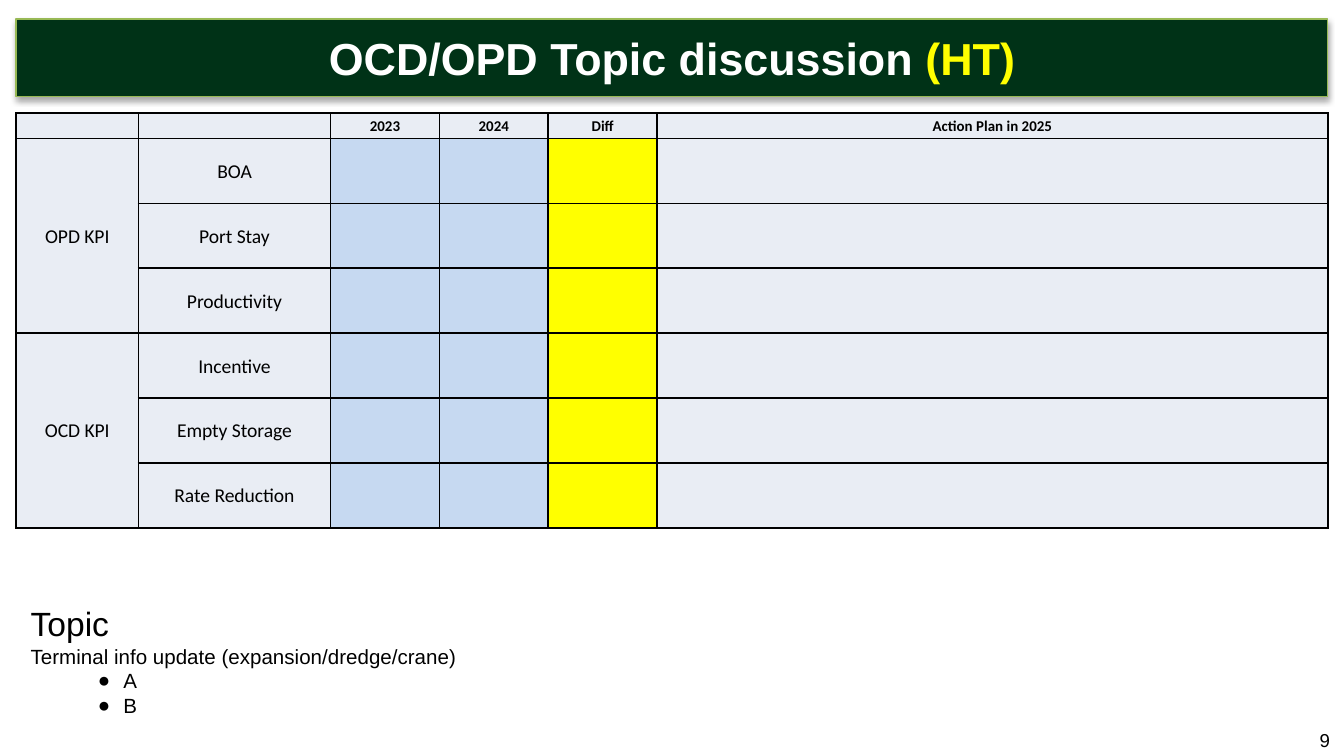
from lxml.etree import SubElement
from pptx import Presentation
from pptx.dml.color import RGBColor
from pptx.enum.shapes import MSO_SHAPE
from pptx.enum.text import MSO_ANCHOR, PP_ALIGN
from pptx.oxml.ns import qn
from pptx.util import Inches, Pt

WIDTH = 10
HEIGHT = WIDTH * 9 / 16
MARGIN = 0.12
CONTENT_WIDTH = WIDTH - 2 * MARGIN

GREEN, LIME, BLACK, WHITE = "003217", "98B955", "000000", "FFFFFF"
PALE, BLUE, YELLOW = "E9EDF4", "C6D9F1", "FFFF00"

COLUMN_WIDTHS = [0.91, 1.43, 0.81, 0.81, 0.81, 4.99]
HEADER_HEIGHT, BODY_HEIGHT = 0.19, 2.9
HEADERS = ["", "", "2023", "2024", "Diff", "Action Plan in 2025"]
BODY_FILLS = [PALE, PALE, BLUE, BLUE, YELLOW, PALE]
KPI_GROUPS = {
    "OPD KPI": ["BOA", "Port Stay", "Productivity"],
    "OCD KPI": ["Incentive", "Empty Storage", "Rate Reduction"],
}


def paint(color_format, color):
    color_format.rgb = RGBColor.from_string(color)


def fill_solid(fill, color):
    fill.solid()
    paint(fill.fore_color, color)


def style_font(font, size, color=BLACK, name="Arial", bold=False):
    font.size, font.name, font.bold = Pt(size), name, bold
    fill_solid(font.fill, color)


def set_insets(target, left, top, right, bottom):
    target.margin_left, target.margin_right = Inches(left), Inches(right)
    target.margin_top, target.margin_bottom = Inches(top), Inches(bottom)


def add_soft_shadow(shape):
    effects = SubElement(shape._element.spPr, qn("a:effectLst"))
    shadow = SubElement(effects, qn("a:outerShdw"), blurRad=str(Pt(3.1)),
                        dist=str(Pt(1.8)), dir="5400000", rotWithShape="0")
    color = SubElement(shadow, qn("a:srgbClr"), val=BLACK)
    SubElement(color, qn("a:alpha"), val="35000")


def add_banner(slide, spans):
    banner = slide.shapes.add_shape(
        MSO_SHAPE.RECTANGLE, Inches(MARGIN), Inches(0.14),
        Inches(CONTENT_WIDTH), Inches(0.58))
    fill_solid(banner.fill, GREEN)
    paint(banner.line.color, LIME)
    banner.line.width = Pt(0.75)
    add_soft_shadow(banner)
    frame = banner.text_frame
    set_insets(frame, 0, 0, 0, 0)
    frame.vertical_anchor = MSO_ANCHOR.MIDDLE
    para = frame.paragraphs[0]
    para.alignment = PP_ALIGN.CENTER
    for text, color in spans:
        span = para.add_run()
        span.text = text
        style_font(span.font, 24, color, bold=True)


def add_borders(cell):
    properties = cell._tc.get_or_add_tcPr()
    for side in ("lnL", "lnR", "lnT", "lnB"):
        line = SubElement(properties, qn(f"a:{side}"), w=str(Pt(1)))
        solid = SubElement(line, qn("a:solidFill"))
        SubElement(solid, qn("a:srgbClr"), val=BLACK)


def style_cell(cell, text, fill, size, bold=False):
    add_borders(cell)
    fill_solid(cell.fill, fill)
    set_insets(cell, 0.01, 0.01, 0.01, 0)
    cell.vertical_anchor = MSO_ANCHOR.MIDDLE
    para = cell.text_frame.paragraphs[0]
    para.text = text
    para.alignment = PP_ALIGN.CENTER
    style_font(para.font, size, name="Calibri", bold=bold)


def add_kpi_table(slide):
    rows = [[group if index == 0 else "", topic, "", "", "", ""]
            for group, topics in KPI_GROUPS.items()
            for index, topic in enumerate(topics)]
    table = slide.shapes.add_table(
        len(rows) + 1, len(HEADERS), Inches(MARGIN), Inches(0.84),
        Inches(CONTENT_WIDTH), Inches(HEADER_HEIGHT + BODY_HEIGHT)).table
    for column, width in zip(table.columns, COLUMN_WIDTHS):
        column.width = Inches(width)
    for row in table.rows:
        row.height = Inches(BODY_HEIGHT / len(rows))
    table.rows[0].height = Inches(HEADER_HEIGHT)

    # Header and body cells
    for column, text in enumerate(HEADERS):
        style_cell(table.cell(0, column), text, PALE, 8, bold=True)
    for row, texts in enumerate(rows, start=1):
        for column, (text, fill) in enumerate(zip(texts, BODY_FILLS)):
            style_cell(table.cell(row, column), text, fill, 10.5)

    # One merged label for each group
    first = 1
    for topics in KPI_GROUPS.values():
        last = first + len(topics) - 1
        table.cell(first, 0).merge(table.cell(last, 0))
        first = last + 1


def add_bullet(para):
    properties = para._p.get_or_add_pPr()
    properties.set("marL", str(Inches(0.69)))
    properties.set("indent", str(Inches(-0.19)))
    SubElement(properties, qn("a:buFont"), typeface="Arial")
    SubElement(properties, qn("a:buChar"), char="●")


def add_text(slide, left, top, width, height, lines, anchor=MSO_ANCHOR.TOP):
    box = slide.shapes.add_textbox(
        Inches(left), Inches(top), Inches(width), Inches(height))
    frame = box.text_frame
    frame.word_wrap = True
    frame.vertical_anchor = anchor
    for index, (text, size, bulleted) in enumerate(lines):
        para = frame.add_paragraph() if index else frame.paragraphs[0]
        para.text = text
        if bulleted:
            para.level = 1
            add_bullet(para)
        style_font(para.font, size)


def main():
    deck = Presentation()
    deck.slide_width, deck.slide_height = Inches(WIDTH), Inches(HEIGHT)
    page = deck.slides.add_slide(deck.slide_layouts[6])

    # Title and table
    add_banner(page, [("OCD/OPD Topic discussion ", WHITE), ("(HT)", YELLOW)])
    add_kpi_table(page)

    # Page number and topic notes
    add_text(page, 9.72, 5.39, 0.64, 0.23, [("9", 10, False)],
             MSO_ANCHOR.MIDDLE)
    add_text(page, 0.13, 4.44, CONTENT_WIDTH, 1.33, [
        ("Topic", 18, False),
        ("Terminal info update (expansion/dredge/crane)", 11, False),
        ("A", 11, True),
        ("B", 11, True),
    ])
    deck.save("out.pptx")


if __name__ == "__main__":
    main()
